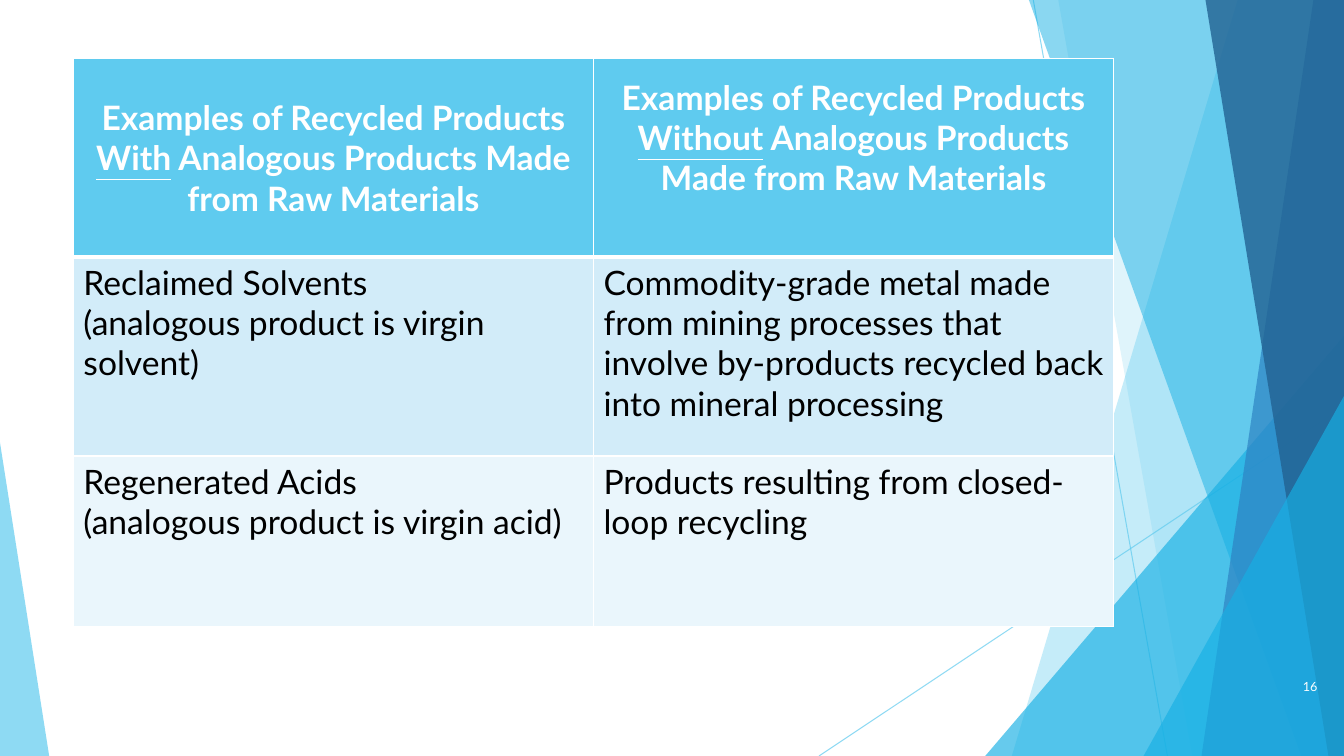
from lxml import etree
from pptx import Presentation
from pptx.dml.color import RGBColor
from pptx.enum.shapes import MSO_CONNECTOR, MSO_SHAPE
from pptx.enum.text import MSO_ANCHOR, PP_ALIGN
from pptx.oxml.ns import qn
from pptx.util import Cm, Pt

COLORS = {
    "white": "FFFFFF", "black": "000000", "sky": "5FCBEF", "cyan": "17B0E4",
    "blue": "2E83C3", "navy": "226292", "band": "D2ECF9", "pale": "EAF6FC",
}
FONT = "Lato"
WIDTH, HEIGHT = 33.87, 19.05
HEADERS = [
    ("Examples of Recycled Products ", "With",
     " Analogous Products Made from Raw Materials"),
    ("Examples of Recycled Products ", "Without",
     " Analogous Products Made from Raw Materials"),
]
ROWS = [
    ("Reclaimed Solvents\n(analogous product is virgin solvent)",
     "Commodity-grade metal made from mining processes that involve "
     "by-products recycled back into mineral processing"),
    ("Regenerated Acids\n(analogous product is virgin acid)",
     "Products resulting from closed-loop recycling"),
]


def rgb(name):
    return RGBColor.from_string(COLORS[name])


def set_alpha(fill, percent):
    color = fill._xPr.find(qn("a:solidFill"))[0]
    etree.SubElement(color, qn("a:alpha")).set("val", str(percent * 1000))


def paint(sp, color, percent):
    sp.shadow.inherit = False
    sp.fill.solid()
    sp.fill.fore_color.rgb = rgb(color)
    set_alpha(sp.fill, percent)
    sp.line.fill.background()


def style_run(r, size, color, bold=False):
    r.font.name = FONT
    r.font.size = Pt(size)
    r.font.bold = bold
    r.font.color.rgb = rgb(color)


def add_ray(slide, x1, y1, x2, y2):
    ray = slide.shapes.add_connector(
        MSO_CONNECTOR.STRAIGHT, Cm(x1), Cm(y1), Cm(x2), Cm(y2))
    ray.line.width = Pt(0.75)
    ray.line.color.rgb = rgb("sky")
    set_alpha(ray.line.fill, 70)
    etree.SubElement(ray._element.spPr, qn("a:effectLst"))


def add_shard(slide, right, top, bottom, top_inset, bottom_inset, color, alpha):
    fb = slide.shapes.build_freeform(Cm(right - top_inset), Cm(top))
    fb.add_line_segments([(Cm(right), Cm(top)), (Cm(right), Cm(bottom)),
                          (Cm(right - bottom_inset), Cm(bottom))])
    paint(fb.convert_to_shape(), color, alpha)


def add_corner(slide, left, bottom, width, height, apex, color, alpha):
    sp = slide.shapes.add_shape(MSO_SHAPE.ISOSCELES_TRIANGLE, Cm(left),
                                Cm(bottom - height), Cm(width), Cm(height))
    sp.adjustments[0] = apex
    paint(sp, color, alpha)


def add_backdrop(slide, left, top, width, height):
    right, bottom = left + width, top + height
    add_ray(slide, right - 7.83, top, right - 4.45, bottom)
    add_ray(slide, right, top + 10.24, right - 13.23, bottom)
    add_shard(slide, right, top, bottom, 2.68, 8.37, "sky", 36)
    add_shard(slide, right, top, bottom, 7.2, 3.82, "sky", 20)
    add_corner(slide, right - 9.04, bottom, 9.04, 10.59, 1, "cyan", 66)
    add_shard(slide, right, top, bottom, 7.94, 1.08, "cyan", 50)
    add_shard(slide, right, top, bottom, 0.77, 3.59, "blue", 70)
    add_shard(slide, right, top, bottom, 3.49, 0.39, "navy", 80)
    add_corner(slide, right - 5.05, bottom, 5.05, 9.07, 1, "cyan", 66)
    add_corner(slide, left, bottom, 1.24, 7.9, 0, "sky", 70)


def set_borders(cell, top, bottom):
    tcPr = cell._tc.get_or_add_tcPr()
    sides = [("L", 1), ("R", 1), ("T", top), ("B", bottom)]
    for i, (side, points) in enumerate(sides):
        ln = etree.Element(qn(f"a:ln{side}"), w=str(Pt(points)))
        fill = etree.SubElement(ln, qn("a:solidFill"))
        etree.SubElement(fill, qn("a:srgbClr"), val=COLORS["white"])
        tcPr.insert(i, ln)


def fill_cell(cell, color, top=1, bottom=1):
    cell.fill.solid()
    cell.fill.fore_color.rgb = rgb(color)
    set_borders(cell, top, bottom)


def add_examples_table(slide, left, top, width, height):
    table = slide.shapes.add_table(
        3, 2, Cm(left), Cm(top), Cm(width), Cm(height)).table
    for column in table.columns:
        column.width = Cm(width / 2)
    for row, share in zip(table.rows, (0.35, 0.35, 0.3)):
        row.height = Cm(height * share)

    for i, parts in enumerate(HEADERS):
        cell = table.cell(0, i)
        fill_cell(cell, "sky", bottom=3)
        cell.vertical_anchor = MSO_ANCHOR.MIDDLE
        p = cell.text_frame.paragraphs[0]
        p.alignment = PP_ALIGN.CENTER
        for text, underline in zip(parts, (False, True, False)):
            r = p.add_run()
            r.text = text
            style_run(r, 24, "white", bold=True)
            r.font.underline = underline
    table.cell(0, 1).margin_bottom = Cm(1.14)

    for i, (texts, color) in enumerate(zip(ROWS, ("band", "pale")), 1):
        for j, text in enumerate(texts):
            cell = table.cell(i, j)
            fill_cell(cell, color, top=3 if i == 1 else 1)
            cell.text_frame.text = text
            for p in cell.text_frame.paragraphs:
                style_run(p.runs[0], 24, "black")


def add_page_number(slide, left, top, width, height):
    tb = slide.shapes.add_textbox(Cm(left), Cm(top), Cm(width), Cm(height))
    tf = tb.text_frame
    tf.word_wrap = True
    tf.vertical_anchor = MSO_ANCHOR.MIDDLE
    tf.text = "16"
    p = tf.paragraphs[0]
    p.alignment = PP_ALIGN.RIGHT
    style_run(p.runs[0], 9, "white")


def main():
    prs = Presentation()
    prs.slide_width, prs.slide_height = Cm(WIDTH), Cm(HEIGHT)
    slide = prs.slides.add_slide(prs.slide_layouts[6])
    add_backdrop(slide, 0, 0, WIDTH, HEIGHT)
    add_examples_table(slide, 1.85, 1.47, 26.21, 14.32)
    add_page_number(slide, 31.55, 16.79, 1.9, 1.02)
    prs.save("out.pptx")


if __name__ == "__main__":
    main()
